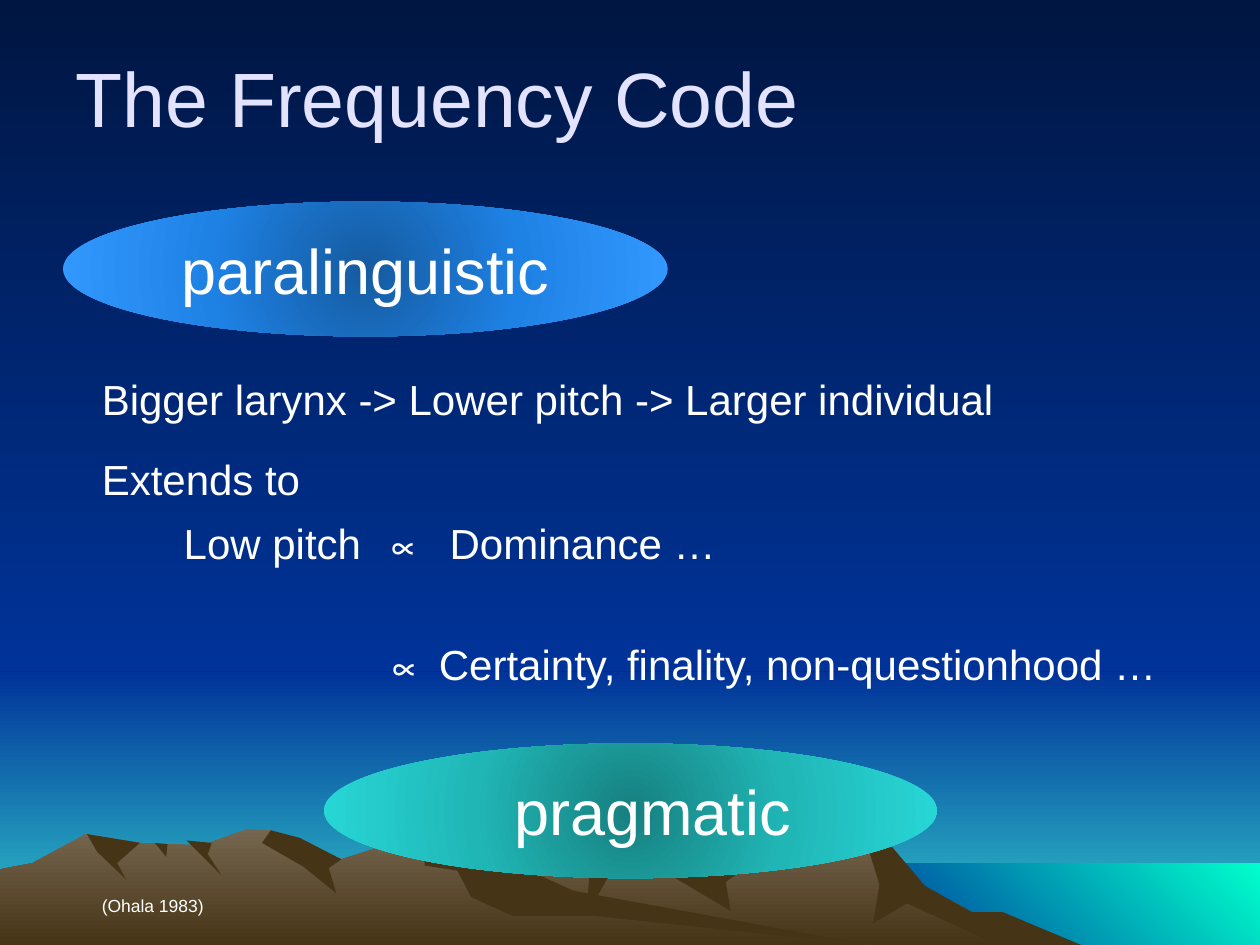
from lxml import etree
from pptx import Presentation
from pptx.dml.color import RGBColor
from pptx.enum.shapes import MSO_SHAPE
from pptx.enum.text import MSO_ANCHOR, PP_ALIGN
from pptx.oxml.ns import qn
from pptx.util import Inches, Pt

OVAL, RECTANGLE = MSO_SHAPE.OVAL, MSO_SHAPE.RECTANGLE
TOP, MIDDLE = MSO_ANCHOR.TOP, MSO_ANCHOR.MIDDLE
LEFT, CENTER = PP_ALIGN.LEFT, PP_ALIGN.CENTER

FONT = "Arial"
WIDTH, HEIGHT = 10, 7.5
HORIZON, SHORE_LEFT, SHORE_TOP = 5.33, 6.83, 6.85
COLORS = {
    "night": "001642", "blue": "003399", "horizon": "33CCCC", "sea": "00FFCC",
    "rock": "75664F", "earth": "463416", "title": "E3E3FF", "text": "FFFFFF",
}
DOWN, UP_RIGHT = 270, 45

# Bands: left, top, right, bottom, gradient colours and angle
BANDS = [
    (0, HORIZON, WIDTH, HEIGHT, ("blue", "horizon"), DOWN),
    (0, 0, WIDTH, HORIZON, ("night", "blue"), DOWN),
    (SHORE_LEFT, SHORE_TOP, WIDTH, HEIGHT, ("blue", "sea"), UP_RIGHT),
]

# Mountains, back to front: ridge, then the shadows lying on it
MOUNTAINS = [
    ([(2.58, 7.5), (3.55, 6.98), (4.68, 6.58), (5.26, 6.73), (5.66, 6.97), (6.29, 6.71),
      (6.85, 6.6), (7.23, 6.98), (8.2, 7.5)],
     [[(6.85, 6.6), (7.07, 6.71), (7.34, 7.03), (7.71, 7.24), (7.96, 7.24), (8.58, 7.5),
       (7.92, 7.5), (7.2, 7.17), (6.93, 7.33), (6.98, 7.02)],
      [(4.71, 6.58), (4.97, 6.71), (4.65, 7.27)],
      [(5.29, 6.76), (5.92, 6.89), (5.76, 7), (5.8, 7.23), (5.36, 6.97)]]),
    ([(0, 7.5), (0, 6.9), (0.26, 6.85), (0.68, 6.62), (1.11, 6.69), (1.6, 6.71), (1.96, 6.58),
      (2.15, 6.59), (2.71, 6.82), (3.31, 6.63), (4.32, 7.12), (6.9, 7.5)],
     [[(2.15, 6.59), (2.38, 6.65), (2.71, 6.82), (2.61, 6.89), (2.67, 7.09), (2.41, 6.88),
       (2.08, 6.69)],
      [(3.37, 6.65), (3.7, 6.68), (4.55, 7.07), (6.9, 7.5), (4.72, 7.27), (4.07, 7.27),
       (3.74, 7.12), (3.63, 6.91), (3.37, 6.87)],
      [(1.48, 6.67), (1.68, 6.69), (1.65, 6.78), (1.76, 6.95)],
      [(1.23, 6.69), (1.33, 6.7), (1.32, 6.8)],
      [(0.69, 6.62), (1.11, 6.69), (0.93, 6.85), (1, 6.98), (0.77, 6.76)]]),
]

# Ovals: text, box, gradient from centre to edge, alignment, left indent
OVALS = [
    ("paralinguistic", (0.5, 1.6, 4.8, 1.07), ("155BA0", "1E81E4", "3399FF"), CENTER, 0),
    ("pragmatic", (2.57, 5.9, 4.87, 1.07), ("178080", "21B6B6", "28D7D7"), LEFT, 0.7),
]

# Text boxes: box, style (size, colour, anchor, line spacing, space after), (text, indent) lines
TITLE_STYLE = (44, "title", MIDDLE, 1, 0)
BODY_STYLE = (24, "text", TOP, 1.07, 6)
SOURCE_STYLE = (10, "text", TOP, 1.07, 6)
TEXTS = [
    ((0.5, 0.14, 9, 1.25), TITLE_STYLE, [("The Frequency Code", 0)]),
    ((0.71, 2.89, 7.63, 0.77), BODY_STYLE,
     [("Bigger larynx -> Lower pitch -> Larger individual", 0)]),
    ((0.71, 7.04, 5.2, 0.27), SOURCE_STYLE, [("(Ohala 1983)", 0)]),
    ((0.71, 3.52, 5.2, 0.98), BODY_STYLE,
     [("Extends to", 0), ("Low pitch  ∝  Dominance …", 0.65)]),
    ((2.96, 4.99, 6.94, 0.5), BODY_STYLE, [("∝ Certainty, finality, non-questionhood …", 0)]),
]


def fill_linear(fill, names, angle):
    fill.gradient()
    fill.gradient_angle = angle
    for stop, name, position in zip(fill.gradient_stops, names, (0, 1)):
        stop.color.rgb = RGBColor.from_string(COLORS[name])
        stop.position = position


def fill_radial(shape, colors):
    shape.fill.gradient()
    gradient = shape._element.spPr.find(qn("a:gradFill"))
    for child in list(gradient):
        gradient.remove(child)
    stops = etree.SubElement(gradient, qn("a:gsLst"))
    for index, color in enumerate(colors):
        stop = etree.SubElement(stops, qn("a:gs"), pos=str(index * 50000))
        etree.SubElement(stop, qn("a:srgbClr"), val=color)
    center = etree.SubElement(gradient, qn("a:path"))
    center.set("path", "circle")
    etree.SubElement(center, qn("a:fillToRect"), {side: "50000" for side in "ltrb"})


def make_plain(shape):
    shape.shadow.inherit = False
    shape.line.fill.background()
    return shape


def add_outline(slide, points):
    corners = [(Inches(x), Inches(y)) for x, y in points]
    builder = slide.shapes.build_freeform(*corners[0])
    builder.add_line_segments(corners[1:], close=True)
    return make_plain(builder.convert_to_shape())


def write_line(paragraph, text, size, color, indent):
    run = paragraph.add_run()
    run.text = text
    run.font.name = FONT
    run.font.size = Pt(size)
    run.font.color.rgb = RGBColor.from_string(COLORS[color])
    if indent:
        paragraph._p.get_or_add_pPr().set("marL", str(Inches(indent)))


presentation = Presentation()
presentation.slide_width, presentation.slide_height = Inches(WIDTH), Inches(HEIGHT)
slide = presentation.slides.add_slide(presentation.slide_layouts[6])
fill_linear(slide.background.fill, ("night", "blue"), DOWN)

# Sky and sea
for left, top, right, bottom, names, angle in BANDS:
    box = (left, top, right - left, bottom - top)
    band = make_plain(slide.shapes.add_shape(RECTANGLE, *map(Inches, box)))
    fill_linear(band.fill, names, angle)

# Mountains
for ridge, shadows in MOUNTAINS:
    fill_linear(add_outline(slide, ridge).fill, ("rock", "earth"), DOWN)
    for points in shadows:
        shadow = add_outline(slide, points)
        shadow.fill.solid()
        shadow.fill.fore_color.rgb = RGBColor.from_string(COLORS["earth"])

# Ovals
for text, box, colors, alignment, indent in OVALS:
    oval = make_plain(slide.shapes.add_shape(OVAL, *map(Inches, box)))
    fill_radial(oval, colors)
    oval.text_frame.vertical_anchor = MIDDLE
    paragraph = oval.text_frame.paragraphs[0]
    paragraph.alignment = alignment
    write_line(paragraph, text, 36, "text", indent)

# Text boxes
for box, (size, color, anchor, line_spacing, space_after), lines in TEXTS:
    frame = slide.shapes.add_textbox(*map(Inches, box)).text_frame
    frame.word_wrap = True
    frame.vertical_anchor = anchor
    for index, (text, indent) in enumerate(lines):
        paragraph = frame.add_paragraph() if index else frame.paragraphs[0]
        paragraph.line_spacing = line_spacing
        paragraph.space_after = Pt(space_after)
        write_line(paragraph, text, size, color, indent)

presentation.save("out.pptx")
